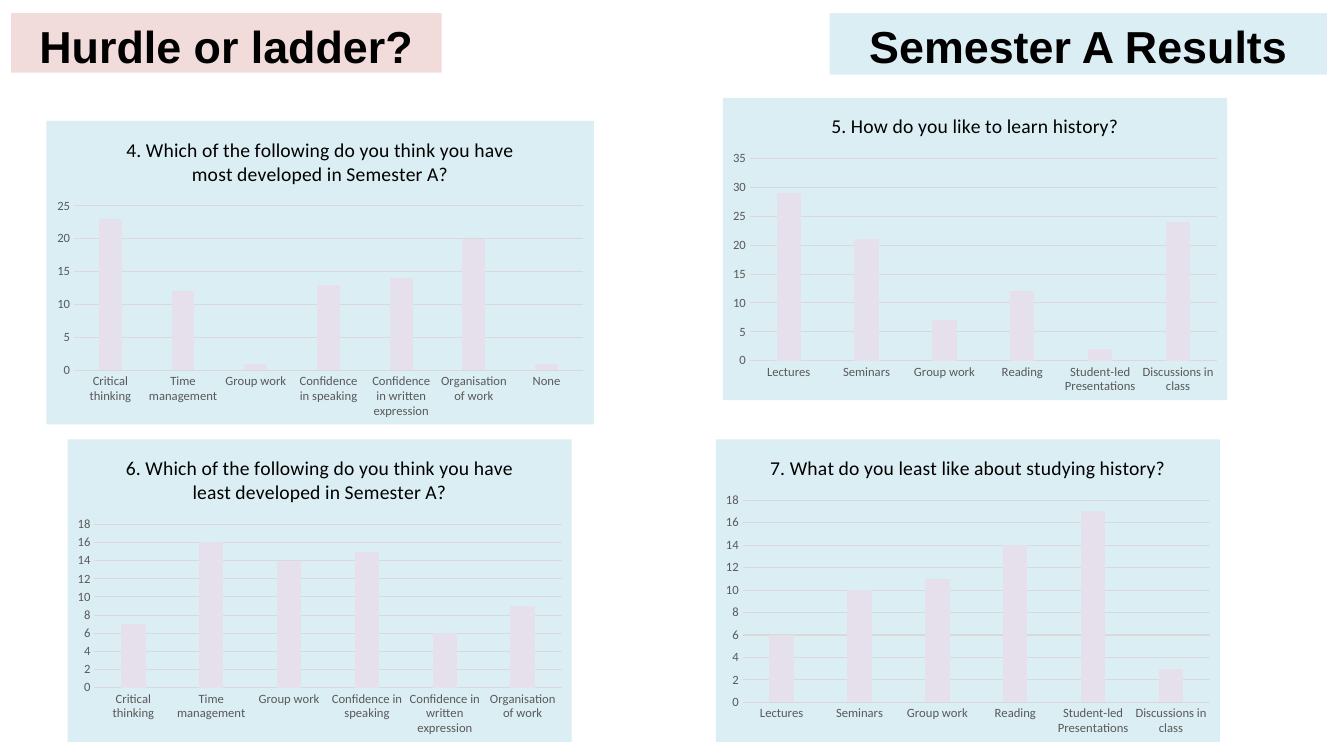
"""Build the Semester A results slide: two headings and four survey column charts."""
import pptx
import pptx.chart.data
import pptx.dml.color
import pptx.enum.chart
import pptx.enum.shapes
import pptx.enum.text
import pptx.util

COLORS = {"ink": "000000", "axis": "595959", "grid": "D9D9D9", "panel": "DBEEF4",
          "column": "E6E0EC", "rose": "F2DCDB"}
SLIDE_WIDTH, SLIDE_HEIGHT = 13.33, 7.5
LOWER_TOP = 4.36
PANEL_SIZE = (5, 3)

SKILLS = ["Critical thinking", "Time management", "Group work", "Confidence in speaking",
          "Confidence in written expression", "Organisation of work"]
ACTIVITIES = ["Lectures", "Seminars", "Group work", "Reading", "Student-led Presentations",
              "Discussions in class"]

HEADINGS = [
    {"text": "Hurdle or ladder?", "box": (0.11, 0.13, 4.27, 0.59), "fill": "rose"},
    {"text": "Semester A Results", "box": (8.23, 0.13, 4.93, 0.61), "fill": "panel"},
]
SURVEYS = [
    {"title": "4. Which of the following do you think you have most developed in Semester A?",
     "categories": SKILLS + ["None"], "values": (23, 12, 1, 13, 14, 20, 1),
     "box": (0.46, 1.2, 5.43, 3.01), "top_value": 25, "step": 5},
    {"title": "5. How do you like to learn history?",
     "categories": ACTIVITIES, "values": (29, 21, 7, 12, 2, 24),
     "box": (7.17, 0.97, *PANEL_SIZE), "top_value": 35, "step": 5},
    {"title": "6. Which of the following do you think you have least developed in Semester A?",
     "categories": SKILLS, "values": (7, 16, 14, 15, 6, 9),
     "box": (0.67, LOWER_TOP, *PANEL_SIZE), "top_value": 18, "step": 2},
    {"title": "7. What do you least like about studying history?",
     "categories": ACTIVITIES, "values": (6, 10, 11, 14, 17, 3),
     "box": (7.1, LOWER_TOP, *PANEL_SIZE), "top_value": 18, "step": 2},
]


def rgb(name):
    """Return the named palette colour."""
    return pptx.dml.color.RGBColor.from_string(COLORS[name])


def inches(box):
    """Convert a box of inches to lengths."""
    return [pptx.util.Inches(length) for length in box]


def format_font(font, size, color, name="Calibri", bold=False):
    """Set the face, size, weight and colour of a font."""
    font.name, font.size, font.bold = name, pptx.util.Pt(size), bold
    font.color.rgb = rgb(color)


def write_text(frame, text, size=14, color="ink", name="Calibri", bold=False, space=0):
    """Write one centred, formatted paragraph into a text frame."""
    paragraph = frame.paragraphs[0]
    paragraph.alignment = pptx.enum.text.PP_ALIGN.CENTER
    paragraph.space_before = paragraph.space_after = pptx.util.Pt(space)
    run = paragraph.add_run()
    run.text = text
    format_font(run.font, size, color, name, bold)


def format_heading(shape, heading):
    """Place, fill and label a heading block."""
    shape.left, shape.top, shape.width, shape.height = inches(heading["box"])
    shape.fill.solid()
    shape.fill.fore_color.rgb = rgb(heading["fill"])
    shape.line.fill.background()
    frame = shape.text_frame
    frame.word_wrap = True
    frame.auto_size = pptx.enum.text.MSO_AUTO_SIZE.NONE
    frame.vertical_anchor = pptx.enum.text.MSO_ANCHOR.TOP
    frame.margin_left = frame.margin_right = pptx.util.Inches(0.11)
    frame.margin_top = frame.margin_bottom = pptx.util.Inches(0.06)
    write_text(frame, heading["text"], size=32, name="Arial", bold=True, space=0.9)


def fill_chart_space(chart):
    """Fill the chart background and remove its outline."""
    properties = pptx.oxml.parse_xml(
        '<c:spPr xmlns:c="http://schemas.openxmlformats.org/drawingml/2006/chart" '
        'xmlns:a="http://schemas.openxmlformats.org/drawingml/2006/main">'
        f'<a:solidFill><a:srgbClr val="{COLORS["panel"]}"/></a:solidFill>'
        '<a:ln><a:noFill/></a:ln></c:spPr>')
    chart.element.chart.addnext(properties)


def add_survey(slide, survey):
    """Add one survey question as a column chart."""
    data = pptx.chart.data.CategoryChartData()
    data.categories = survey["categories"]
    data.add_series("Series 1", survey["values"])
    chart = slide.shapes.add_chart(pptx.enum.chart.XL_CHART_TYPE.COLUMN_CLUSTERED,
                                   *inches(survey["box"]), data).chart
    format_font(chart.font, 10, "ink")
    chart.has_legend = False
    chart.has_title = True
    write_text(chart.chart_title.text_frame, survey["title"])
    chart.chart_title.include_in_layout = False
    fill_chart_space(chart)

    plot = chart.plots[0]
    plot.gap_width, plot.overlap, plot.vary_by_categories = 219, -27, False
    column_fill = plot.series[0].format.fill
    column_fill.solid()
    column_fill.fore_color.rgb = rgb("column")

    category_axis, value_axis = chart.category_axis, chart.value_axis
    for axis in (category_axis, value_axis):
        axis.major_tick_mark = axis.minor_tick_mark = pptx.enum.chart.XL_TICK_MARK.NONE
        format_font(axis.tick_labels.font, 9, "axis")
    value_axis.minimum_scale, value_axis.maximum_scale = 0, survey["top_value"]
    value_axis.major_unit = survey["step"]
    value_axis.format.line.fill.background()
    for line in (category_axis.format.line, value_axis.major_gridlines.format.line):
        line.color.rgb = rgb("grid")
        line.width = pptx.util.Pt(0.75)


def main():
    """Assemble and save the slide."""
    presentation = pptx.Presentation()
    presentation.slide_width = pptx.util.Inches(SLIDE_WIDTH)
    presentation.slide_height = pptx.util.Inches(SLIDE_HEIGHT)
    slide = presentation.slides.add_slide(presentation.slide_layouts.get_by_name("Title Only"))
    for survey in SURVEYS:
        add_survey(slide, survey)
    title_heading, results_heading = HEADINGS
    format_heading(slide.shapes.title, title_heading)
    results = slide.shapes.add_shape(pptx.enum.shapes.MSO_SHAPE.RECTANGLE,
                                     *inches(results_heading["box"]))
    results.shadow.inherit = False
    format_heading(results, results_heading)
    presentation.save("out.pptx")


if __name__ == "__main__":
    main()
